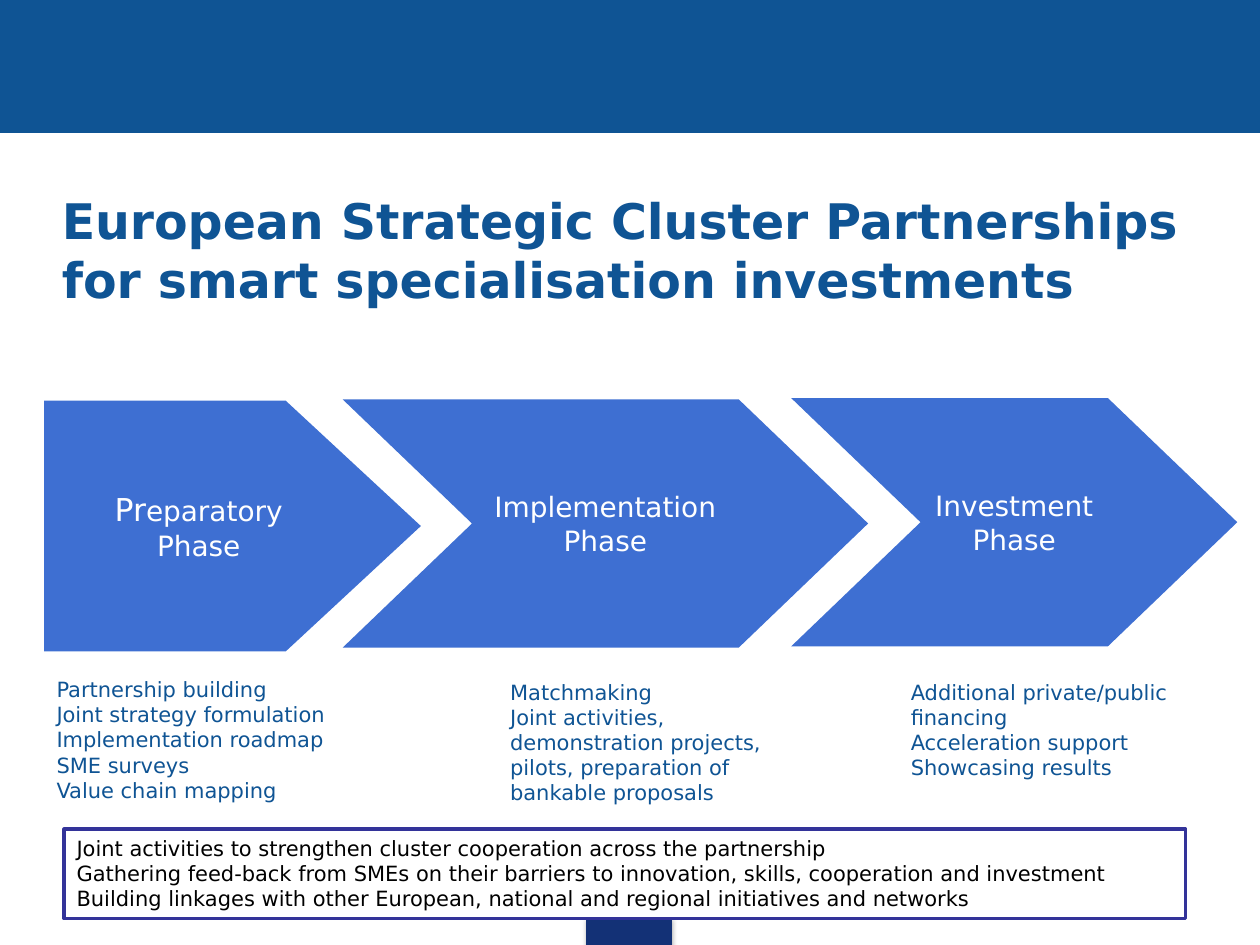
from lxml.etree import SubElement
from pptx import Presentation
from pptx.dml.color import RGBColor
from pptx.enum.shapes import MSO_SHAPE
from pptx.enum.text import MSO_ANCHOR, PP_ALIGN
from pptx.oxml.ns import qn
from pptx.util import Inches, Pt

FONT = "DejaVu Sans"
BLUE, NAVY, ARROW = "0F5494", "133176", "3E6FD2"
WHITE, BLACK, EDGE = "FFFFFF", "000000", "333399"

PHASES = [
    (MSO_SHAPE.PENTAGON, (0.35, 3.18, 2.99, 1.99), 0.539, "Preparatory\nPhase"),
    (MSO_SHAPE.CHEVRON, (2.72, 3.17, 4.17, 1.97), 0.521, "Implementation\nPhase"),
    (MSO_SHAPE.CHEVRON, (6.28, 3.16, 3.54, 1.97), 0.521, "Investment\nPhase"),
]
TASKS = [
    ((0.35, 5.32, 2.52, 1.11),
     "Partnership building\nJoint strategy formulation\nImplementation roadmap\n"
     "SME surveys\nValue chain mapping"),
    ((3.95, 5.34, 2.52, 1.11),
     "Matchmaking\nJoint activities, demonstration projects, pilots, "
     "preparation of bankable proposals"),
    ((7.13, 5.34, 2.52, 0.91),
     "Additional private/public financing\nAcceleration support\nShowcasing results"),
]
SHARED = (
    "Joint activities to strengthen cluster cooperation across the partnership\n"
    "Gathering feed-back from SMEs on their barriers to innovation, skills, "
    "cooperation and investment\n"
    "Building linkages with other European, national and regional initiatives and networks"
)


def color(code):
    """Turn a hex string into a colour."""
    return RGBColor.from_string(code)


def place(box):
    """Turn a box in inches into lengths."""
    return [Inches(n) for n in box]


def write(shape, text, size, ink, align=PP_ALIGN.LEFT, anchor=MSO_ANCHOR.TOP, bold=False):
    """Fill a shape with styled, wrapped text."""
    frame = shape.text_frame
    frame.text = text
    frame.word_wrap = True
    frame.vertical_anchor = anchor
    for para in frame.paragraphs:
        para.alignment = align
        for run in para.runs:
            font = run.font
            font.name, font.size, font.bold = FONT, Pt(size), bold
            font.color.rgb = color(ink)


def add_block(slide, kind, box, fill, line=None, width=0.75):
    """Add a flat preset shape."""
    shape = slide.shapes.add_shape(kind, *place(box))
    shape.shadow.inherit = False
    shape.fill.solid()
    shape.fill.fore_color.rgb = color(fill)
    if line:
        shape.line.color.rgb = color(line)
        shape.line.width = Pt(width)
    else:
        shape.line.fill.background()
    return shape


def add_shade(shape):
    """Give a shape a soft shadow below it."""
    effects = shape._element.spPr.find(qn("a:effectLst"))
    shade = SubElement(effects, qn("a:outerShdw"), blurRad=str(Pt(3.1)),
                       dist=str(Pt(1.8)), dir="5400000", rotWithShape="0")
    ink = SubElement(shade, qn("a:srgbClr"), val=BLACK)
    SubElement(ink, qn("a:alpha"), val="35000")


def add_title(slide, text):
    """Move and format the title placeholder."""
    title = slide.shapes.title
    title.left, title.top, title.width, title.height = place((0, 1.47, 10, 1.02))
    write(title, text, 28, BLUE, anchor=MSO_ANCHOR.MIDDLE, bold=True)
    title.text_frame.margin_left = Inches(0.49)


def add_phase(slide, kind, box, point, text):
    """Add one arrow of the process."""
    shape = add_block(slide, kind, box, ARROW)
    shape.adjustments[0] = point
    write(shape, text, 16, WHITE, PP_ALIGN.CENTER, MSO_ANCHOR.MIDDLE)
    return shape


def add_tasks(slide, box, text):
    """Add the list of tasks under an arrow."""
    write(slide.shapes.add_textbox(*place(box)), text, 12, BLUE)


def main():
    """Build the slide and save it."""
    deck = Presentation()
    deck.slide_width, deck.slide_height = Inches(10), Inches(7.5)
    slide = deck.slides.add_slide(deck.slide_layouts[5])
    add_block(slide, MSO_SHAPE.RECTANGLE, (0, 0, 10, 1.05), BLUE, BLUE)
    add_shade(add_block(slide, MSO_SHAPE.RECTANGLE, (4.66, 7.28, 0.67, 0.22), NAVY, NAVY))
    add_title(slide, "European Strategic Cluster Partnerships for smart specialisation investments")
    arrows = [add_phase(slide, *phase) for phase in PHASES]
    first = arrows[0].text_frame.paragraphs[0]
    first.runs[0].text = "Pr"
    first.runs[0].font.size = Pt(18)
    rest = first.add_run()
    rest.text = "eparatory"
    rest.font.name, rest.font.size = FONT, Pt(16)
    rest.font.color.rgb = color(WHITE)
    for box, text in TASKS:
        add_tasks(slide, box, text)
    frame = add_block(slide, MSO_SHAPE.RECTANGLE, (0.51, 6.58, 8.9, 0.71), WHITE, EDGE, 2)
    write(frame, SHARED, 12, BLACK)
    deck.save("out.pptx")


if __name__ == "__main__":
    main()
